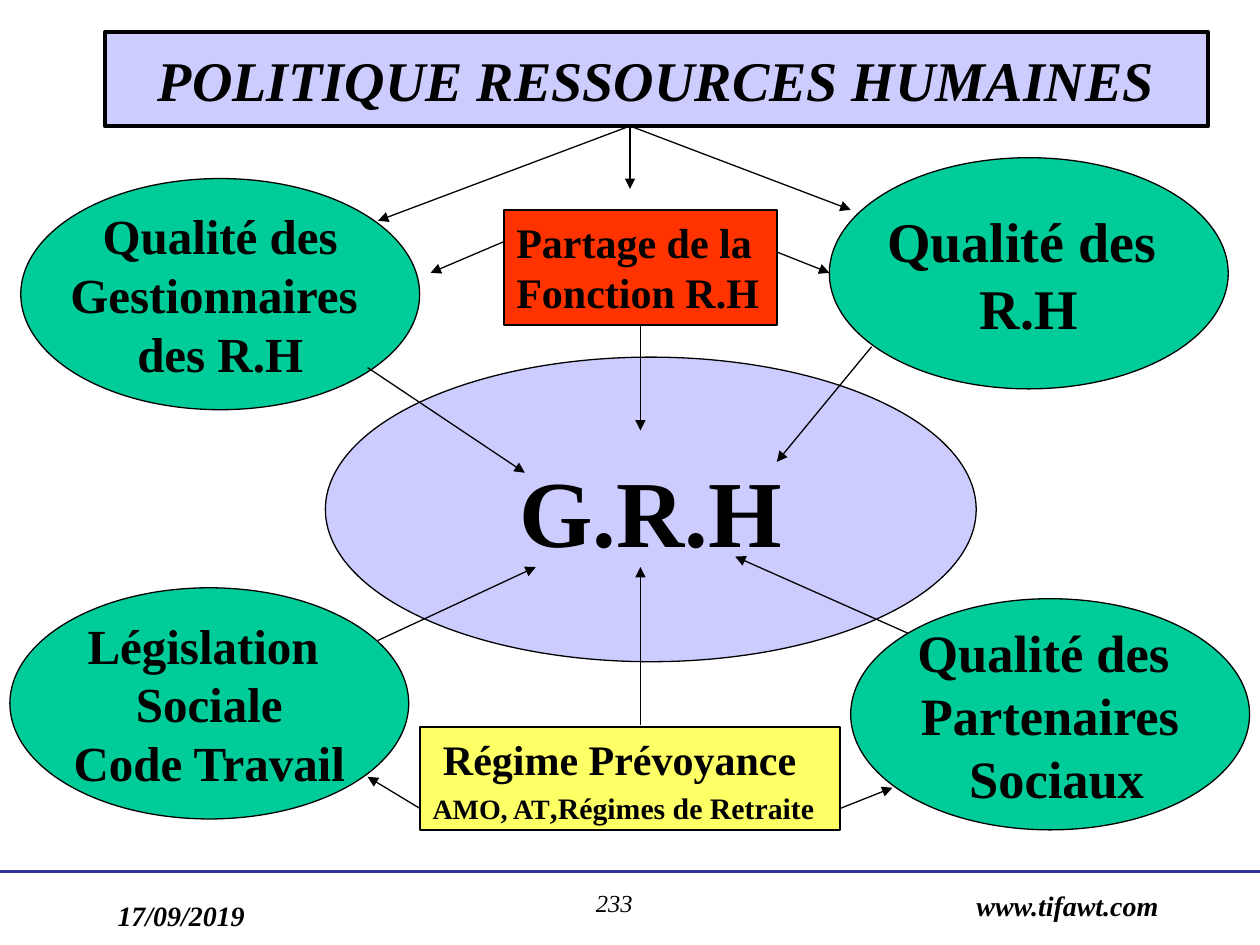
from dataclasses import dataclass

from lxml import etree
from pptx import Presentation
from pptx.dml.color import RGBColor
from pptx.enum.shapes import MSO_CONNECTOR, MSO_SHAPE
from pptx.enum.text import MSO_ANCHOR, MSO_AUTO_SIZE, PP_ALIGN
from pptx.oxml.ns import qn
from pptx.util import Cm, Pt

STRAIGHT = MSO_CONNECTOR.STRAIGHT
RECTANGLE, OVAL = MSO_SHAPE.RECTANGLE, MSO_SHAPE.OVAL
TOP, MIDDLE = MSO_ANCHOR.TOP, MSO_ANCHOR.MIDDLE
LEFT, CENTER = PP_ALIGN.LEFT, PP_ALIGN.CENTER
NO_AUTOFIT = MSO_AUTO_SIZE.NONE

FONT = "Times New Roman"
COLORS = {
    "ink": "000000",
    "lavender": "CCCCFF",
    "green": "00CC99",
    "red": "FF3300",
    "yellow": "FFFF66",
    "rule": "333399",
}
TITLE_ONLY = 5
BOTTOM_SIDE = 2
FACTOR_WIDTH, FACTOR_HEIGHT = 8.04, 4.66


@dataclass
class Box:
    """Bounds in centimetres."""
    left: float
    top: float
    width: float
    height: float

    def lengths(self) -> tuple:
        return Cm(self.left), Cm(self.top), Cm(self.width), Cm(self.height)


@dataclass
class Node:
    box: Box
    lines: tuple
    size: int
    fill: str
    is_oval: bool = True


@dataclass
class Arrow:
    x1: float
    y1: float
    x2: float
    y2: float


@dataclass
class FooterItem:
    box: Box
    text: str
    size: int
    bold: bool
    align: PP_ALIGN


def factor(left: float, top: float, size: int, *lines: str) -> Node:
    """One of the four equal ovals around the centre."""
    return Node(Box(left, top, FACTOR_WIDTH, FACTOR_HEIGHT), lines, size, "green")


def rgb(name: str) -> RGBColor:
    return RGBColor.from_string(COLORS[name])


def style_font(font, size: float, bold: bool = True, italic: bool = False) -> None:
    font.name = FONT
    font.size = Pt(size)
    font.bold = bold
    font.italic = italic
    font.color.rgb = rgb("ink")


def paint(shape, fill: str, line_width: float) -> None:
    shape.fill.solid()
    shape.fill.fore_color.rgb = rgb(fill)
    shape.line.color.rgb = rgb("ink")
    shape.line.width = Pt(line_width)


def draw_title(slide) -> None:
    title = slide.shapes.title
    title.left, title.top, title.width, title.height = Box(2.12, 0.64, 22.23, 1.91).lengths()
    paint(title, "lavender", 2.25)
    frame = title.text_frame
    frame.text = "POLITIQUE RESSOURCES HUMAINES"
    frame.auto_size = NO_AUTOFIT
    frame.vertical_anchor = MIDDLE
    frame.paragraphs[0].alignment = CENTER
    style_font(frame.paragraphs[0].font, 32, italic=True)


def draw_node(slide, node: Node):
    shape = slide.shapes.add_shape(OVAL if node.is_oval else RECTANGLE, *node.box.lengths())
    shape.shadow.inherit = False
    paint(shape, node.fill, 0.75 if node.is_oval else 1)
    frame = shape.text_frame
    frame.word_wrap = not node.is_oval
    frame.vertical_anchor = MIDDLE if node.is_oval else TOP
    frame.text = "\n".join(node.lines)
    for paragraph in frame.paragraphs:
        paragraph.alignment = CENTER if node.is_oval else LEFT
        style_font(paragraph.font, node.size)
    return shape


def add_scheme_details(scheme) -> None:
    details = scheme.text_frame.add_paragraph()
    details.alignment = LEFT
    details.line_spacing = 0.5
    details.space_before = Pt(12)
    for text, size in (("AMO, AT", 16), (",", 18), ("Régimes de Retraite", 17)):
        run = details.add_run()
        run.text = text
        style_font(run.font, size)


def draw_line(slide, path: Arrow, color: str = "ink", width: float = 0.75, head: bool = True):
    line = slide.shapes.add_connector(
        STRAIGHT, Cm(path.x1), Cm(path.y1), Cm(path.x2), Cm(path.y2))
    line.line.color.rgb = rgb(color)
    line.line.width = Pt(width)
    if head:
        etree.SubElement(line.line._get_or_add_ln(), qn("a:tailEnd"), type="triangle")
    etree.SubElement(line._element.spPr, qn("a:effectLst"))
    return line


def draw_footer_item(slide, item: FooterItem) -> None:
    frame = slide.shapes.add_textbox(*item.box.lengths()).text_frame
    frame.word_wrap = True
    frame.text = item.text
    frame.paragraphs[0].alignment = item.align
    style_font(frame.paragraphs[0].font, item.size, item.bold, italic=True)


FOOTER = (
    FooterItem(Box(2.12, 17.99, 5.29, 1.27), "17/09/2019", 16, True, LEFT),
    FooterItem(Box(17.57, 17.78, 8.04, 1.27), "www.tifawt.com ", 16, True, CENTER),
    FooterItem(Box(9.74, 17.78, 5.29, 1.27), "233", 14, False, CENTER),
)
HR_MANAGEMENT = Node(Box(6.56, 7.2, 13.12, 6.14), ("G.R.H",), 54, "lavender")
WELFARE_SCHEME = Node(Box(8.47, 14.66, 8.47, 2.08), (" Régime Prévoyance",), 24, "yellow", False)
SHARED_FUNCTION = Node(
    Box(10.16, 4.23, 5.5, 2.32), ("Partage de la Fonction R.H",), 24, "red", False)
FACTORS = (
    factor(16.72, 3.18, 32, "Qualité des ", "R.H"),
    factor(0.42, 3.6, 28, "Qualité des", "Gestionnaires ", "des R.H"),
    factor(0.2, 11.85, 28, "Législation ", "Sociale", "Code Travail"),
    factor(17.15, 12.07, 30, "Qualité des ", "Partenaires", " Sociaux"),
)
POLICY_ARROWS = (
    Arrow(12.7, 2.54, 12.7, 3.81),
    Arrow(12.7, 2.54, 7.62, 4.45),
    Arrow(12.7, 2.54, 17.15, 4.23),
)
FUNCTION_ARROWS = (
    Arrow(10.16, 4.87, 8.68, 5.5),
    Arrow(15.66, 5.08, 16.72, 5.5),
)
SCHEME_ARROWS = (
    Arrow(12.91, 14.61, 12.91, 11.43),
    Arrow(8.47, 16.3, 7.41, 15.66),
    Arrow(16.93, 16.3, 17.99, 15.88),
)
FACTOR_ARROWS = (
    Arrow(7.62, 12.91, 10.8, 11.43),
    Arrow(17.57, 6.99, 15.66, 9.31),
    Arrow(18.63, 12.91, 14.82, 11.22),
)
FUNCTION_TO_CENTRE = Arrow(12.91, 6.55, 12.91, 8.68)
MANAGERS_TO_CENTRE = Arrow(7.41, 7.41, 10.58, 9.53)


def main() -> None:
    deck = Presentation()
    deck.slide_width, deck.slide_height = Cm(25.4), Cm(19.05)
    slide = deck.slides.add_slide(deck.slide_layouts[TITLE_ONLY])

    draw_line(slide, Arrow(0, 17.57, 25.4, 17.57), "rule", 2, head=False)
    for item in FOOTER:
        draw_footer_item(slide, item)
    draw_title(slide)
    draw_node(slide, HR_MANAGEMENT)
    add_scheme_details(draw_node(slide, WELFARE_SCHEME))
    shared_function = draw_node(slide, SHARED_FUNCTION)
    for arrow in FACTOR_ARROWS + SCHEME_ARROWS + FUNCTION_ARROWS + POLICY_ARROWS:
        draw_line(slide, arrow)
    draw_line(slide, FUNCTION_TO_CENTRE).begin_connect(shared_function, BOTTOM_SIDE)
    for oval in FACTORS:
        draw_node(slide, oval)
    draw_line(slide, MANAGERS_TO_CENTRE)

    deck.save("out.pptx")


if __name__ == "__main__":
    main()
